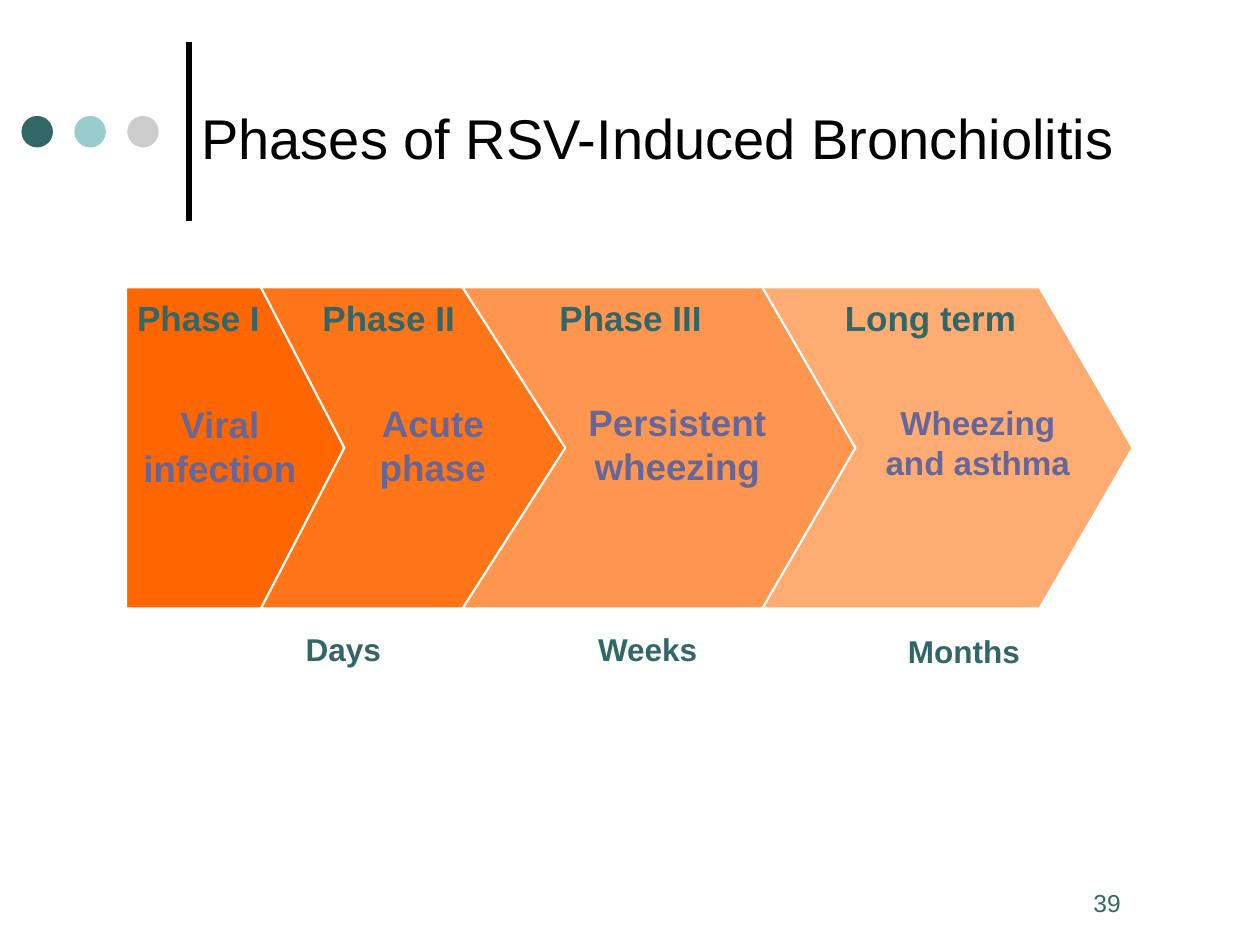
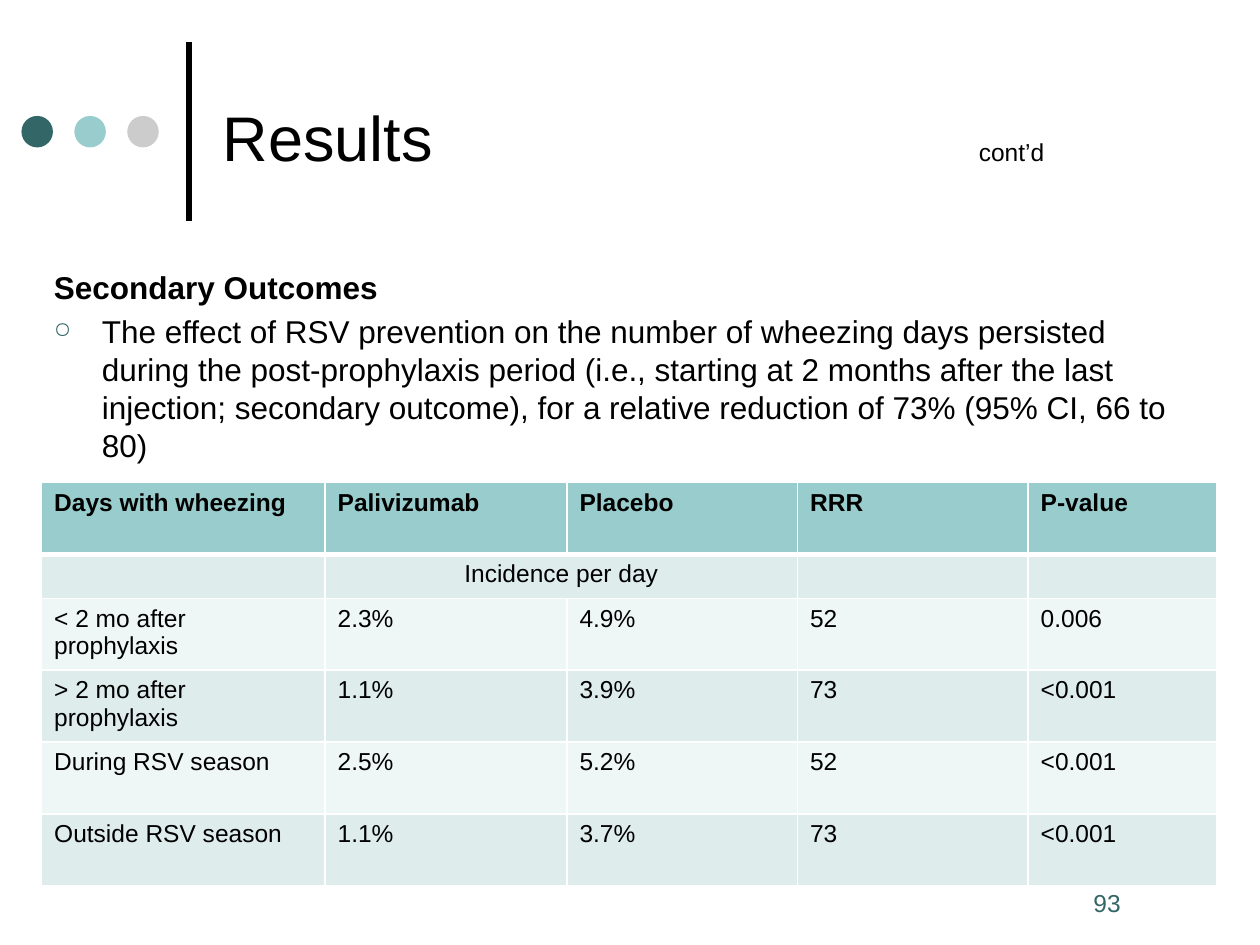
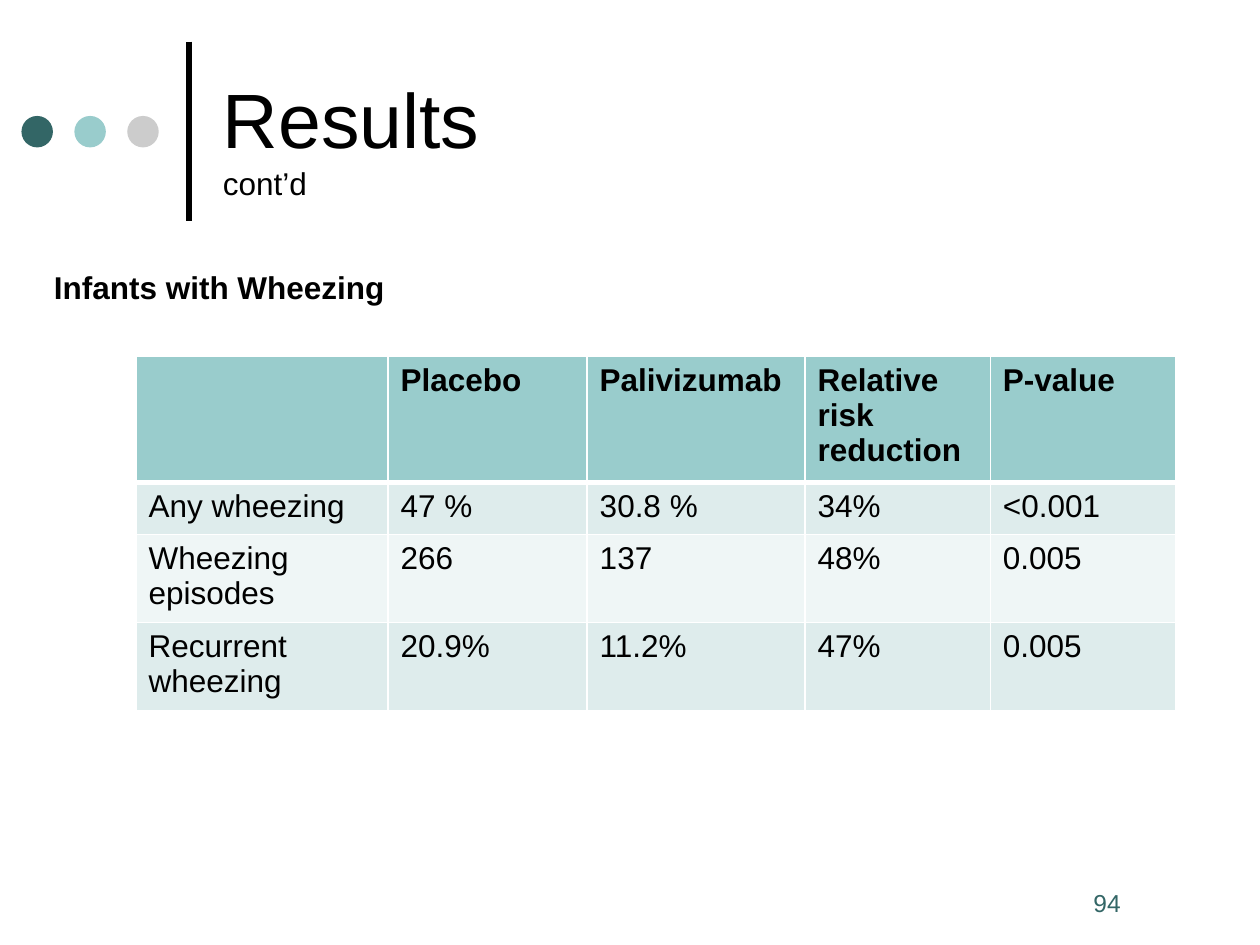
import dataclasses
import typing

import lxml.etree
import pptx
import pptx.dml.color
import pptx.enum.shapes
import pptx.enum.text
import pptx.oxml
import pptx.oxml.ns
import pptx.util

Inches = pptx.util.Inches
Pt = pptx.util.Pt
Shapes = pptx.enum.shapes.MSO_SHAPE
Align = pptx.enum.text.PP_ALIGN
Anchor = pptx.enum.text.MSO_ANCHOR

FONT = "Arial"
COLORS = {
    "text": "000000",
    "white": "FFFFFF",
    "teal": "336666",
    "aqua": "99CCCC",
    "gray": "CCCCCC",
    "violet": "666699",
    "band_dark": "DEECEC",
    "band_light": "EFF6F6",
    "phase_1": "FF6600",
    "phase_2": "FF7517",
    "phase_3": "FF964F",
    "phase_4": "FFAC73",
}


@dataclasses.dataclass
class Title:
    text: str
    size: float
    left: float = 1.67
    width: float = 7.67
    suffix: str = ""
    suffix_size: float = 14
    tab_stop: float = 0


@dataclasses.dataclass
class Phase:
    left: float
    width: float
    adjustment: float
    color: str


@dataclasses.dataclass
class Label:
    text: str
    left: float
    top: float
    width: float
    height: float
    size: float
    color: str


@dataclasses.dataclass
class Grid:
    left: float
    top: float
    columns: list[float]
    rows: list[float]
    size: float
    cells: list[list[str]]


PHASES = [
    Phase(1, 1.73, 0.25, "phase_1"),
    Phase(2.07, 2.66, 0.26, "phase_2"),
    Phase(3.67, 3.22, 0.32, "phase_3"),
    Phase(6.05, 2.94, 0.29, "phase_4"),
]

LABELS = [
    *(
        Label(text, left, 2.35, 1.85, 0.33, 20, "teal")
        for text, left in [
            ("Phase I", 0.65),
            ("Phase II", 2.16),
            ("Phase III", 4.08),
            ("Long term", 6.46),
        ]
    ),
    Label("Viral\vinfection", 0.82, 3.19, 1.85, 0.7, 21, "violet"),
    Label("Acute\vphase", 2.51, 3.18, 1.85, 0.7, 21, "violet"),
    Label("Persistent wheezing", 4.45, 3.17, 1.85, 0.7, 21, "violet"),
    Label("Wheezing and asthma", 6.92, 3.19, 1.68, 0.63, 19, "violet"),
    Label("Days", 1, 5, 3.45, 0.3, 18, "teal"),
    Label("Weeks", 2.98, 5, 4.32, 0.3, 18, "teal"),
    Label("Months", 5.49, 5.02, 4.32, 0.3, 18, "teal"),
]

WHEEZING_DAYS = Grid(
    0.33,
    3.83,
    [2.25, 1.92, 1.83, 1.83, 1.5],
    [0.57, 0.35, 0.57, 0.57, 0.57, 0.57],
    14,
    [
        ["Days with wheezing", "Palivizumab", "Placebo", "RRR", "P-value"],
        ["", "Incidence per day", "", "", ""],
        ["< 2 mo after prophylaxis", "2.3%", "4.9%", "52", "0.006"],
        ["> 2 mo after prophylaxis", "1.1%", "3.9%", "73", "<0.001"],
        ["During RSV season", "2.5%", "5.2%", "52", "<0.001"],
        ["Outside RSV season", "1.1%", "3.7%", "73", "<0.001"],
    ],
)

INFANTS = Grid(
    1.08,
    2.83,
    [2, 1.58, 1.73, 1.47, 1.47],
    [0.93, 0.41, 0.66, 0.66],
    18,
    [
        ["", "Placebo", "Palivizumab", "Relative risk reduction", "P-value"],
        ["Any wheezing", "47 %", "30.8 %", "34%", "<0.001"],
        ["Wheezing episodes", "266", "137", "48%", "0.005"],
        ["Recurrent wheezing", "20.9%", "11.2%", "47%", "0.005"],
    ],
)

SECONDARY_OUTCOME = (
    "The effect of RSV prevention on the number of wheezing days persisted "
    "during the post-prophylaxis period (i.e., starting at 2 months after the "
    "last injection; secondary outcome), for a relative reduction of 73% "
    "(95% CI, 66 to 80)"
)


def rgb(name: str) -> pptx.dml.color.RGBColor:
    return pptx.dml.color.RGBColor.from_string(COLORS[name])


def add_element(parent: typing.Any, tag: str, **attributes: str) -> typing.Any:
    element = lxml.etree.SubElement(parent, pptx.oxml.ns.qn(tag))
    for name, value in attributes.items():
        element.set(name, value)
    return element


def set_font(
    paragraph: typing.Any, size: float, color: str = "text", bold: bool = False
) -> None:
    font = paragraph.font
    font.name = FONT
    font.size = Pt(size)
    font.bold = bold
    font.color.rgb = rgb(color)


def add_text_frame(
    slide: typing.Any, left: float, top: float, width: float, height: float
) -> typing.Any:
    text_box = slide.shapes.add_textbox(
        Inches(left), Inches(top), Inches(width), Inches(height)
    )
    text_box.text_frame.word_wrap = True
    return text_box.text_frame


def add_filled_shape(
    slide: typing.Any,
    kind: typing.Any,
    left: float,
    top: float,
    width: float,
    height: float,
    color: str,
) -> typing.Any:
    shape = slide.shapes.add_shape(
        kind, Inches(left), Inches(top), Inches(width), Inches(height)
    )
    shape.shadow.inherit = False
    shape.fill.solid()
    shape.fill.fore_color.rgb = rgb(color)
    shape.line.fill.background()
    return shape


def add_title(slide: typing.Any, title: Title) -> None:
    text_frame = add_text_frame(slide, title.left, 0.42, title.width, 1.33)
    text_frame.vertical_anchor = Anchor.MIDDLE
    paragraph = text_frame.paragraphs[0]
    if title.tab_stop:
        tabs = add_element(paragraph._p.get_or_add_pPr(), "a:tabLst")
        add_element(tabs, "a:tab", pos=str(Inches(title.tab_stop)), algn="l")
    set_font(paragraph, title.size)
    run = paragraph.add_run()
    run.text = title.text
    run.font.size = Pt(title.size)
    if title.suffix:
        if not title.tab_stop:
            paragraph.add_line_break()
        run = paragraph.add_run()
        run.text = ("\t" if title.tab_stop else "") + title.suffix
        run.font.size = Pt(title.suffix_size)


def add_base_slide(presentation: typing.Any, title: Title, number: int) -> typing.Any:
    slide = presentation.slides.add_slide(presentation.slide_layouts[6])
    rule = slide.shapes.add_connector(
        pptx.enum.shapes.MSO_CONNECTOR.STRAIGHT,
        Inches(1.5),
        Inches(0.33),
        Inches(1.5),
        Inches(1.75),
    )
    rule.line.color.rgb = rgb("text")
    rule.line.width = Pt(3)
    add_element(rule._element.spPr, "a:effectLst")
    for index, color in enumerate(["teal", "aqua", "gray"]):
        left = 0.17 + index * 0.42
        add_filled_shape(slide, Shapes.OVAL, left, 0.92, 0.25, 0.25, color)
    add_title(slide, title)
    paragraph = add_text_frame(slide, 8.58, 7, 1.42, 0.5).paragraphs[0]
    paragraph.text = str(number)
    set_font(paragraph, 14, "teal")
    return slide


def add_phase(slide: typing.Any, phase: Phase, kind: typing.Any) -> None:
    shape = add_filled_shape(
        slide, kind, phase.left, 2.28, phase.width, 2.55, phase.color
    )
    shape.adjustments[0] = phase.adjustment
    shape.line.color.rgb = rgb("white")
    shape.line.width = Pt(1.25)


def add_label(slide: typing.Any, label: Label) -> None:
    text_frame = add_text_frame(
        slide, label.left, label.top, label.width, label.height
    )
    text_frame.margin_left = text_frame.margin_right = 0
    text_frame.margin_top = text_frame.margin_bottom = 0
    paragraph = text_frame.paragraphs[0]
    paragraph.text = label.text
    paragraph.alignment = Align.CENTER
    set_font(paragraph, label.size, label.color, bold=True)


def add_body(slide: typing.Any, heading: str, bullet: str = "") -> None:
    text_frame = add_text_frame(slide, 0.33, 2.08, 9.25, 1.7)
    paragraph = text_frame.paragraphs[0]
    paragraph.text = heading
    set_font(paragraph, 18, bold=True)
    if bullet:
        paragraph = text_frame.add_paragraph()
        paragraph.text = bullet
        paragraph.space_before = Pt(3.6)
        properties = paragraph._p.get_or_add_pPr()
        properties.set("marL", str(Inches(0.38)))
        properties.set("indent", str(-Inches(0.38)))
        bullet_color = add_element(properties, "a:buClr")
        add_element(bullet_color, "a:srgbClr", val=COLORS["teal"])
        add_element(properties, "a:buSzPct", val="70000")
        add_element(properties, "a:buChar", char="○")
        set_font(paragraph, 18)


def set_borders(cell: typing.Any, row_index: int) -> None:
    properties = cell._tc.get_or_add_tcPr()
    widths = {
        "a:lnL": 1,
        "a:lnR": 1,
        "a:lnT": 3 if row_index == 1 else 1,
        "a:lnB": 3 if row_index == 0 else 1,
    }
    for tag, width in widths.items():
        line = add_element(properties, tag, w=str(Pt(width)))
        fill = add_element(line, "a:solidFill")
        add_element(fill, "a:srgbClr", val=COLORS["white"])


def add_grid(slide: typing.Any, grid: Grid) -> typing.Any:
    table = slide.shapes.add_table(
        len(grid.rows),
        len(grid.columns),
        Inches(grid.left),
        Inches(grid.top),
        Inches(sum(grid.columns)),
        Inches(sum(grid.rows)),
    ).table
    for column, width in zip(table.columns, grid.columns):
        column.width = Inches(width)
    for row_index, (row, height) in enumerate(zip(table.rows, grid.rows)):
        row.height = Inches(height)
        band = "band_dark" if row_index % 2 else "band_light"
        for cell, text in zip(row.cells, grid.cells[row_index]):
            set_borders(cell, row_index)
            cell.fill.solid()
            cell.fill.fore_color.rgb = rgb(band if row_index else "aqua")
            paragraph = cell.text_frame.paragraphs[0]
            paragraph.text = text
            set_font(paragraph, grid.size, bold=row_index == 0)
            end = paragraph._p.get_or_add_endParaRPr()
            end.set("sz", str(grid.size * 100))
    return table


def build_phases(presentation: typing.Any) -> None:
    title = Title("Phases of RSV-Induced Bronchiolitis", 32, left=1.5, width=8.5)
    slide = add_base_slide(presentation, title, 39)
    for index, phase in enumerate(PHASES):
        add_phase(slide, phase, Shapes.CHEVRON if index else Shapes.PENTAGON)
    for label in LABELS:
        add_label(slide, label)


def build_secondary_outcomes(presentation: typing.Any) -> None:
    title = Title("Results", 36, suffix="cont’d", tab_stop=6)
    slide = add_base_slide(presentation, title, 93)
    add_body(slide, "Secondary Outcomes", SECONDARY_OUTCOME)
    table = add_grid(slide, WHEEZING_DAYS)
    incidence = table.cell(1, 1)
    incidence.merge(table.cell(1, 2))
    incidence.text_frame.paragraphs[0].alignment = Align.CENTER


def build_infants(presentation: typing.Any) -> None:
    title = Title("Results", 44, suffix="cont’d", suffix_size=18)
    slide = add_base_slide(presentation, title, 94)
    add_body(slide, "Infants with Wheezing")
    add_grid(slide, INFANTS)


def main() -> None:
    presentation = pptx.Presentation()
    presentation.slide_width = Inches(10)
    presentation.slide_height = Inches(7.5)
    build_phases(presentation)
    build_secondary_outcomes(presentation)
    build_infants(presentation)
    presentation.save("out.pptx")


if __name__ == "__main__":
    main()
